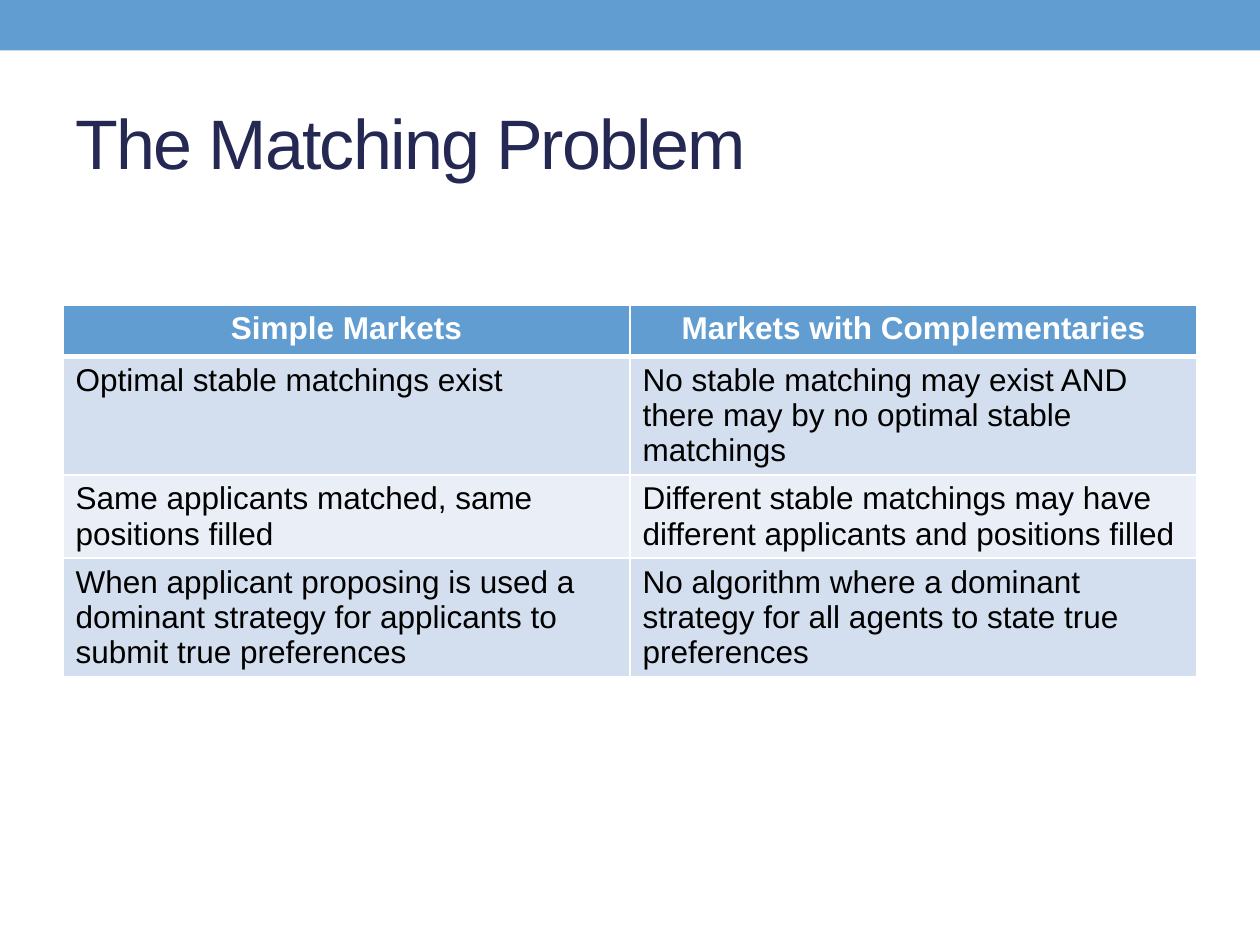
"""Build a slide comparing matching in simple markets and markets with complementaries."""
from dataclasses import dataclass

from lxml.etree import SubElement
from pptx import Presentation
from pptx.dml.color import RGBColor
from pptx.enum.shapes import MSO_SHAPE
from pptx.enum.text import MSO_ANCHOR, PP_ALIGN
from pptx.oxml.ns import qn
from pptx.util import Inches, Pt

COLORS = {
    "accent": "629DD1",
    "title": "242852",
    "band_dark": "D3DFEE",
    "band_light": "EAEFF7",
    "white": "FFFFFF",
    "black": "000000",
}


@dataclass(frozen=True)
class TableRow:
    texts: tuple[str, str]
    fill: str
    color: str = "black"
    header: bool = False
    top: float = 1
    bottom: float = 1


ROWS = [
    TableRow(("Simple Markets", "Markets with Complementaries"),
             "accent", "white", header=True, bottom=3),
    TableRow(("Optimal stable matchings exist",
              "No stable matching may exist AND there may by no optimal stable matchings"),
             "band_dark", top=3),
    TableRow(("Same applicants matched, same positions filled",
              "Different stable matchings may have different applicants and positions filled"),
             "band_light"),
    TableRow(("When applicant proposing is used a dominant strategy for applicants "
              "to submit true preferences",
              "No algorithm where a dominant strategy for all agents to state true preferences"),
             "band_dark"),
]


def rgb(name: str) -> RGBColor:
    return RGBColor.from_string(COLORS[name])


def add_run(p, text: str, size: float, color: str, bold: bool = False):
    r = p.add_run()
    r.text = text
    r.font.name = "Arial"
    r.font.size = Pt(size)
    r.font.bold = bold
    r.font.color.rgb = rgb(color)
    return r


def add_borders(cell, row: TableRow) -> None:
    tc_pr = cell._tc.get_or_add_tcPr()
    for tag, width in (("lnL", 1), ("lnR", 1), ("lnT", row.top), ("lnB", row.bottom)):
        ln = SubElement(tc_pr, qn(f"a:{tag}"), w=str(Pt(width)))
        fill = SubElement(ln, qn("a:solidFill"))
        SubElement(fill, qn("a:srgbClr"), val=COLORS["white"])


def fill_cell(cell, text: str, row: TableRow) -> None:
    add_borders(cell, row)
    cell.fill.solid()
    cell.fill.fore_color.rgb = rgb(row.fill)
    p = cell.text_frame.paragraphs[0]
    p.alignment = PP_ALIGN.CENTER if row.header else PP_ALIGN.LEFT
    add_run(p, text, 18, row.color, row.header)


def add_banner(s) -> None:
    sp = s.shapes.add_shape(MSO_SHAPE.RECTANGLE, 0, 0, Inches(10), Inches(0.4))
    sp.shadow.inherit = False
    sp.fill.solid()
    sp.fill.fore_color.rgb = rgb("accent")
    sp.line.fill.background()


def add_title(s, text: str) -> None:
    sp = s.shapes.title
    sp.left, sp.top = Inches(0.5), Inches(0.58)
    sp.width, sp.height = Inches(9), Inches(1.08)
    tf = sp.text_frame
    tf.word_wrap = True
    tf.vertical_anchor = MSO_ANCHOR.MIDDLE
    p = tf.paragraphs[0]
    p.alignment = PP_ALIGN.LEFT
    r = add_run(p, text, 40, "title")
    r.font._element.set("spc", "-100")


def add_comparison(s, rows: list[TableRow]) -> None:
    frame = s.shapes.add_table(len(rows), 2, Inches(0.5), Inches(2.42), Inches(9), Inches(3.11))
    table = frame.table
    for i, row in enumerate(rows):
        table.rows[i].height = Inches(0.41)
        for j, text in enumerate(row.texts):
            fill_cell(table.cell(i, j), text, row)
    frame.height = Inches(3.11)


def main() -> None:
    prs = Presentation()
    prs.slide_width, prs.slide_height = Inches(10), Inches(7.5)
    s = prs.slides.add_slide(prs.slide_layouts[5])
    add_banner(s)
    add_title(s, "The Matching Problem")
    add_comparison(s, ROWS)
    prs.save("out.pptx")


if __name__ == "__main__":
    main()
